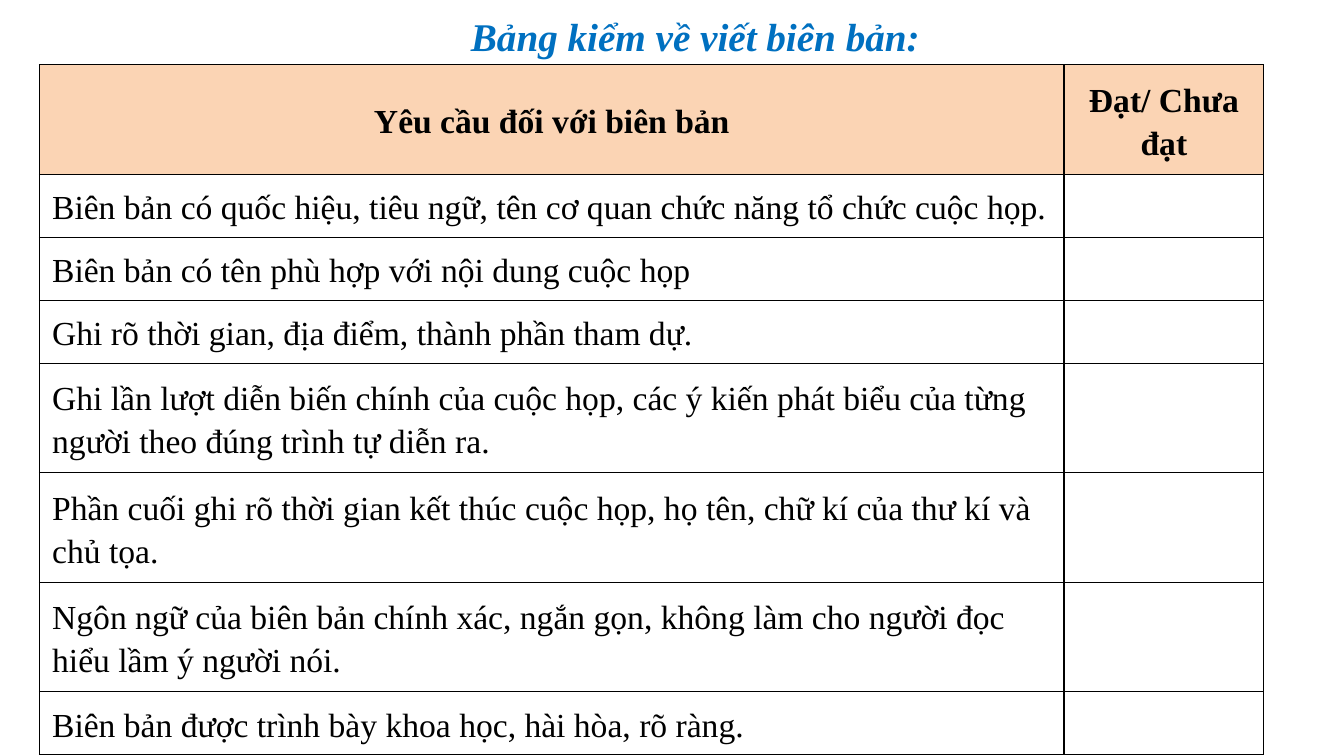
from dataclasses import dataclass

from lxml import etree
from pptx import Presentation
from pptx.dml.color import RGBColor
from pptx.enum.text import MSO_ANCHOR, MSO_AUTO_SIZE, PP_ALIGN
from pptx.oxml.ns import qn
from pptx.util import Pt

LEFT, CENTER = PP_ALIGN.LEFT, PP_ALIGN.CENTER
MIDDLE = MSO_ANCHOR.MIDDLE
FIT_SHAPE = MSO_AUTO_SIZE.SHAPE_TO_FIT_TEXT


@dataclass(frozen=True)
class Theme:
    font: str = "Times New Roman"
    title_size: int = 28
    table_size: int = 24
    title: str = "0070C0"
    text: str = "000000"
    border: str = "000000"
    header_fill: str = "FBD4B4"
    body_fill: str = "FFFFFF"


THEME = Theme()

TITLE = "Bảng kiểm về viết biên bản:"
HEADERS = ("Yêu cầu đối với biên bản", "Đạt/ Chưa đạt")
ONE_LINE, TWO_LINES = 45, 78.25
# Each requirement with its row height
REQUIREMENTS = [
    ("Biên bản có quốc hiệu, tiêu ngữ, tên cơ quan chức năng tổ chức cuộc họp.", ONE_LINE),
    ("Biên bản có tên phù hợp với nội dung cuộc họp", ONE_LINE),
    ("Ghi rõ thời gian, địa điểm, thành phần tham dự.", ONE_LINE),
    ("Ghi lần lượt diễn biến chính của cuộc họp, các ý kiến phát biểu của từng "
     "người theo đúng trình tự diễn ra.", TWO_LINES),
    ("Phần cuối ghi rõ thời gian kết thúc cuộc họp, họ tên, chữ kí của thư kí và "
     "chủ tọa.", TWO_LINES),
    ("Ngôn ngữ của biên bản chính xác, ngắn gọn, không làm cho người đọc "
     "hiểu lầm ý người nói.", TWO_LINES),
    ("Biên bản được trình bày khoa học, hài hòa, rõ ràng.", ONE_LINE),
]
COLUMN_WIDTHS = (731.75, 142.75)


def set_attributes(target, values):
    for name, value in values.items():
        setattr(target, name, value)


def write_text(paragraph, text, size, color, space_after, align=LEFT, bold=False, italic=False):
    set_attributes(paragraph, {
        "alignment": align, "line_spacing": 1.15, "space_after": Pt(space_after)})
    run = paragraph.add_run()
    run.text = text
    set_attributes(run.font, {
        "name": THEME.font, "size": Pt(size), "bold": bold, "italic": italic})
    run.font.color.rgb = RGBColor.from_string(color)


def add_title(slide):
    shape = slide.shapes.add_textbox(Pt(306.75), Pt(0), Pt(361.5), Pt(46))
    set_attributes(shape.text_frame, {"word_wrap": False, "auto_size": FIT_SHAPE})
    paragraph = shape.text_frame.paragraphs[0]
    write_text(paragraph, TITLE, THEME.title_size, THEME.title, 12, bold=True, italic=True)
    paragraph._p.get_or_add_pPr().set("indent", str(Pt(22.5)))


def add_borders(cell):
    properties = cell._tc.get_or_add_tcPr()
    for side in ("a:lnL", "a:lnR", "a:lnT", "a:lnB"):
        line = etree.SubElement(properties, qn(side), w=str(Pt(1)))
        fill = etree.SubElement(line, qn("a:solidFill"))
        etree.SubElement(fill, qn("a:srgbClr"), val=THEME.border)


def format_cell(cell, text, is_header):
    add_borders(cell)
    cell.fill.solid()
    cell.fill.fore_color.rgb = RGBColor.from_string(
        THEME.header_fill if is_header else THEME.body_fill)
    if text:
        set_attributes(cell, {
            "vertical_anchor": MIDDLE,
            "margin_left": Pt(9), "margin_right": Pt(9),
            "margin_top": Pt(5.75), "margin_bottom": Pt(5.75)})
        write_text(cell.text_frame.paragraphs[0], text, THEME.table_size, THEME.text, 10,
                   align=CENTER if is_header else LEFT, bold=is_header)


def add_checklist(slide):
    rows = [(HEADERS, TWO_LINES)]
    rows += [((text, ""), height) for text, height in REQUIREMENTS]
    total_height = sum(height for _, height in rows)
    table = slide.shapes.add_table(
        len(rows), len(COLUMN_WIDTHS), Pt(28.25), Pt(46.25),
        Pt(sum(COLUMN_WIDTHS)), Pt(total_height)).table
    set_attributes(table, {"first_row": False, "horz_banding": False})
    for column, width in zip(table.columns, COLUMN_WIDTHS):
        column.width = Pt(width)
    for index, (texts, height) in enumerate(rows):
        table.rows[index].height = Pt(height)
        for cell, text in zip(table.rows[index].cells, texts):
            format_cell(cell, text, index == 0)


def main():
    presentation = Presentation()
    set_attributes(presentation, {"slide_width": Pt(960), "slide_height": Pt(540)})
    slide = presentation.slides.add_slide(presentation.slide_layouts[6])
    # Heading, then the checklist below it
    add_title(slide)
    add_checklist(slide)
    presentation.save("out.pptx")


if __name__ == "__main__":
    main()
